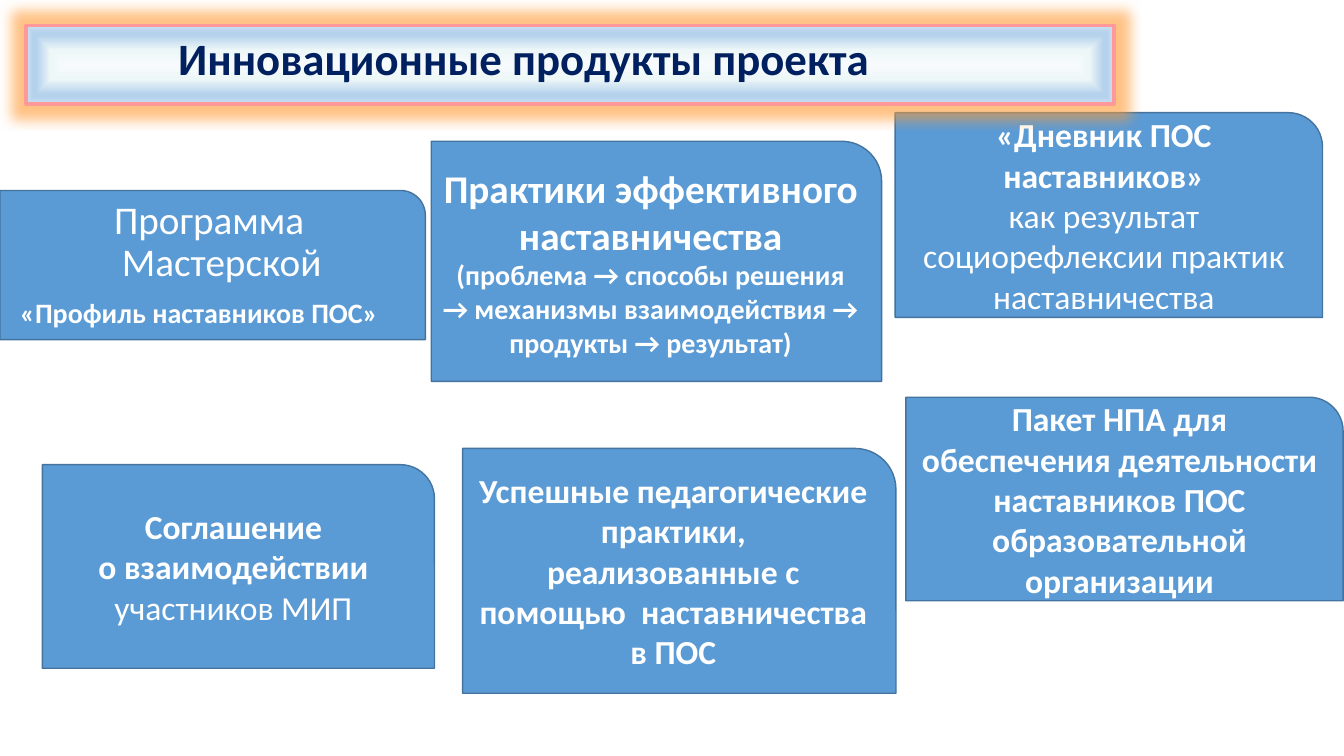
from lxml.etree import SubElement, fromstring
from pptx import Presentation
from pptx.dml.color import RGBColor
from pptx.enum.shapes import MSO_SHAPE
from pptx.enum.text import MSO_ANCHOR, MSO_AUTO_SIZE, PP_ALIGN
from pptx.oxml.ns import qn
from pptx.util import Cm, Pt

NS = 'xmlns:a="http://schemas.openxmlformats.org/drawingml/2006/main"'
FONT = "Calibri"
WHITE, NAVY, BLUE, BLUE_EDGE = "FFFFFF", "002060", "5B9BD5", "43739E"
PINK, GLOW = "FF9999", "FF9933"

TITLE = "Инновационные продукты проекта"
TITLE_BOX = (0.66, 0.64, 27.41, 1.98)
TITLE_STOPS = [(0, "F7FAFD"), (37, "EEF7F8"), (74, "B5D2EC"), (83, "B5D2EC"), (100, "CEE1F2")]

PROGRAM_BOX = (0, 4.8, 10.72, 3.76)
PROGRAM = [
    [("Программа Мастерской", 28, False)],
    [("«Профиль наставников ПОС»", 20, True)],
]

CARDS = [
    ((22.83, 10.01, 11.02, 5.13), [
        [("Пакет НПА для обеспечения деятельности наставников ПОС", 24, True)],
        [("образовательной организации", 24, True)],
    ]),
    ((10.87, 3.56, 11.35, 6.05), [
        [("Практики эффективного наставничества", 28, True)],
        [("(проблема → способы решения → механизмы взаимодействия → продукты → результат)", 20, True)],
    ]),
    ((22.56, 2.84, 10.77, 5.16), [
        [("«Дневник ПОС наставников»", 24, True)],
        [("как результат социорефлексии практик наставничества", 24, False)],
    ]),
    ((1.07, 11.71, 9.88, 5.13), [
        [("Соглашение", 24, True)],
        [("о взаимодействии ", 24, True), ("участников МИП", 24, False)],
    ]),
    ((11.66, 11.3, 10.92, 6.17), [
        [("Успешные педагогические практики,", 24, True)],
        [("реализованные с помощью  наставничества в ПОС", 24, True)],
    ]),
]


def rgb(value):
    return RGBColor.from_string(value)


def place(sp, box):
    sp.left, sp.top, sp.width, sp.height = [Cm(v) for v in box]


def write(sp, paragraphs, color, align, anchor):
    tf = sp.text_frame
    tf.word_wrap = True
    tf.auto_size = MSO_AUTO_SIZE.NONE
    tf.vertical_anchor = anchor
    for i, runs in enumerate(paragraphs):
        p = tf.add_paragraph() if i else tf.paragraphs[0]
        p.alignment = align
        for text, size, bold in runs:
            r = p.add_run()
            r.text = text
            r.font.name, r.font.size, r.font.bold = FONT, Pt(size), bold
            r.font.color.rgb = rgb(color)


def style_card(sp, paragraphs):
    sp.fill.solid()
    sp.fill.fore_color.rgb = rgb(BLUE)
    sp.line.color.rgb = rgb(BLUE_EDGE)
    sp.line.width = Pt(1)
    write(sp, paragraphs, WHITE, PP_ALIGN.CENTER, MSO_ANCHOR.MIDDLE)


def add_program(s):
    sp = s.placeholders[1]
    place(sp, PROGRAM_BOX)
    sp._element.spPr.find(qn("a:xfrm")).addnext(
        fromstring(f'<a:prstGeom {NS} prst="round1Rect"><a:avLst/></a:prstGeom>'))
    style_card(sp, PROGRAM)
    for p in sp.text_frame.paragraphs:
        p.line_spacing = 0.9
        p.space_before = Pt(10)
        pPr = p._p.get_or_add_pPr()
        pPr.set("marL", str(Cm(0.64)))
        pPr.set("indent", str(-Cm(0.64)))
        SubElement(pPr, qn("a:buNone"))
    pPr.set("marR", str(Cm(0.5)))


def add_card(s, box, paragraphs):
    sp = s.shapes.add_shape(MSO_SHAPE.ROUND_1_RECTANGLE, *[Cm(v) for v in box])
    sp.shadow.inherit = False
    style_card(sp, paragraphs)


def add_title(s):
    sp = s.shapes.title
    place(sp, TITLE_BOX)
    sp.line.color.rgb = rgb(PINK)
    sp.line.width = Pt(2.5)
    stops = "".join(f'<a:gs pos="{pos * 1000}"><a:srgbClr val="{c}"/></a:gs>' for pos, c in TITLE_STOPS)
    ln = sp._element.spPr.find(qn("a:ln"))
    ln.addprevious(fromstring(
        f'<a:gradFill {NS}><a:gsLst>{stops}</a:gsLst><a:path path="shape">'
        '<a:fillToRect l="50000" t="50000" r="50000" b="50000"/></a:path></a:gradFill>'))
    ln.addnext(fromstring(
        f'<a:effectLst {NS}><a:glow rad="{Pt(18)}"><a:srgbClr val="{GLOW}">'
        '<a:alpha val="60000"/></a:srgbClr></a:glow></a:effectLst>'))
    write(sp, [[(TITLE, 32, True)]], NAVY, PP_ALIGN.LEFT, MSO_ANCHOR.TOP)
    sp.text_frame.margin_left = Cm(3.83)
    s.shapes._spTree.append(sp._element)


def main():
    prs = Presentation()
    prs.slide_width, prs.slide_height = Cm(33.87), Cm(19.05)
    s = prs.slides.add_slide(prs.slide_layouts[1])
    add_program(s)
    for box, paragraphs in CARDS:
        add_card(s, box, paragraphs)
    add_title(s)
    prs.save("out.pptx")


if __name__ == "__main__":
    main()
